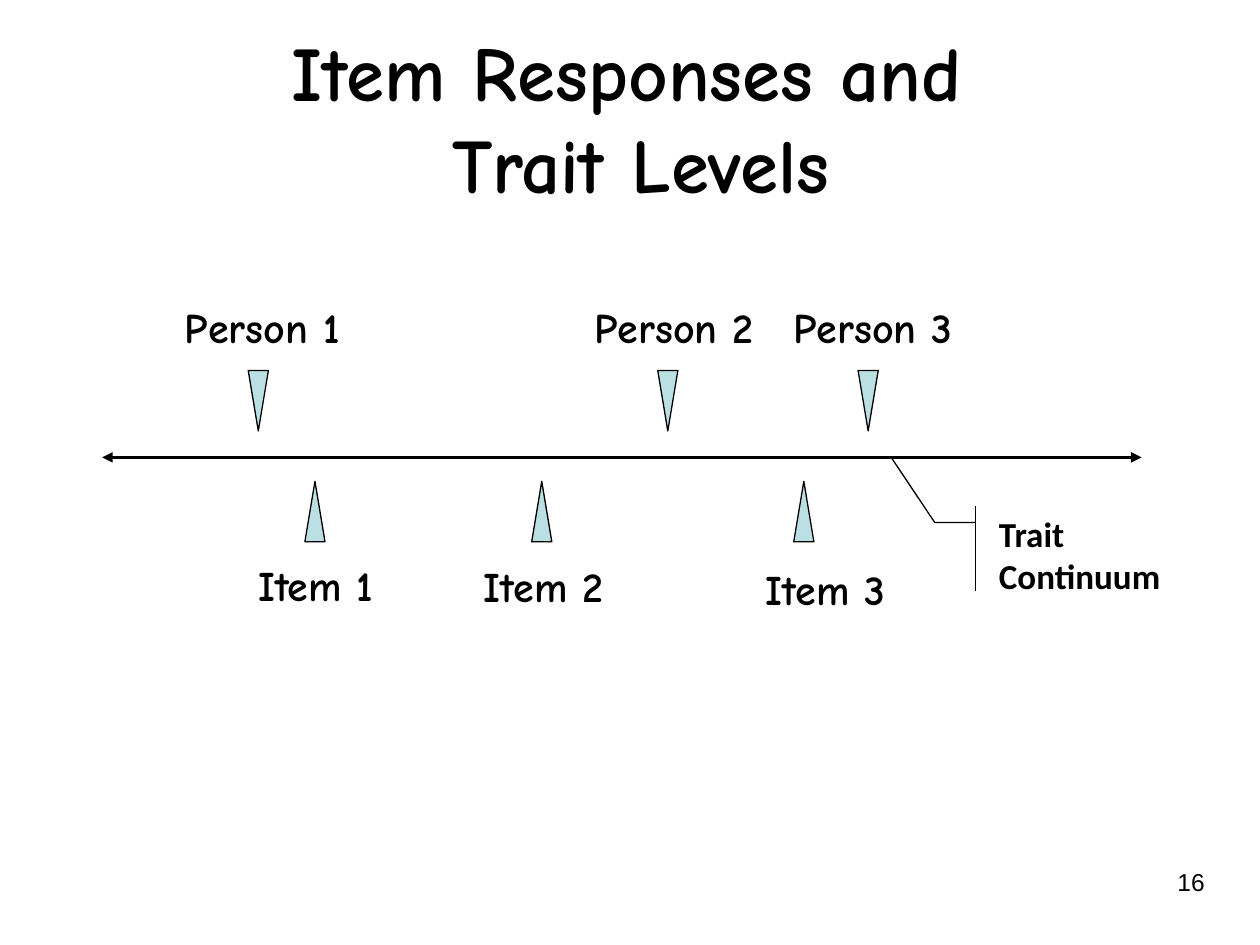
from dataclasses import dataclass

from lxml import etree
from pptx import Presentation
from pptx.dml.color import RGBColor
from pptx.enum.shapes import MSO_CONNECTOR, MSO_SHAPE
from pptx.enum.text import MSO_ANCHOR, PP_ALIGN
from pptx.oxml.ns import qn
from pptx.util import Inches, Pt

STRAIGHT = MSO_CONNECTOR.STRAIGHT
TRIANGLE = MSO_SHAPE.ISOSCELES_TRIANGLE
CALLOUT = MSO_SHAPE.LINE_CALLOUT_2_ACCENT_BAR
TOP, MIDDLE = MSO_ANCHOR.TOP, MSO_ANCHOR.MIDDLE
LEFT, CENTER, RIGHT = PP_ALIGN.LEFT, PP_ALIGN.CENTER, PP_ALIGN.RIGHT

COLORS = {"ink": "000000", "marker": "BBE0E3"}
FORMATS = {
    "title": {"name": "Comic Neue", "size": Pt(44), "bold": True},
    "label": {"name": "Comic Neue", "size": Pt(24), "bold": True},
    "callout": {"name": "Calibri", "size": Pt(20), "bold": True},
    "number": {"name": "Arial", "size": Pt(14), "bold": False},
}
MARKER_WIDTH, MARKER_HEIGHT = 0.16, 0.48
PERSON_TOP, ITEM_TOP = 2.94, 3.82
AXIS_LEFT, AXIS_RIGHT, AXIS_Y = 0.81, 9.06, 3.63


@dataclass
class Box:
    left: float
    top: float
    width: float
    height: float

    def lengths(self) -> list:
        return [Inches(value) for value in (self.left, self.top, self.width, self.height)]


@dataclass
class Marker:
    text: str
    left: float
    label: Box
    points_down: bool


MARKERS = [
    Marker(f"Person {number}", left, Box(label_left, 2.34, 1.6, 0.51), True)
    for number, (left, label_left) in enumerate([(1.97, 1.37), (5.22, 4.62), (6.81, 6.2)], 1)
] + [
    Marker(f"Item {number}", left, Box(label_left, label_top, 1.34, 0.51), False)
    for number, (left, label_left, label_top) in enumerate(
        [(2.42, 1.95, 4.39), (4.22, 3.74, 4.4), (6.3, 5.98, 4.42)], 1
    )
]


def color(name: str) -> RGBColor:
    return RGBColor.from_string(COLORS[name])


def write_text(shape, text: str, style: str, alignment=LEFT, anchor=TOP) -> None:
    frame = shape.text_frame
    frame.word_wrap = True
    frame.vertical_anchor = anchor
    frame.text = text
    for paragraph in frame.paragraphs:
        paragraph.alignment = alignment
        for run in paragraph.runs:
            run.font.color.rgb = color("ink")
            for attribute, value in FORMATS[style].items():
                setattr(run.font, attribute, value)


def add_text(slide, box: Box, text: str, style: str, alignment=LEFT, anchor=TOP) -> None:
    write_text(slide.shapes.add_textbox(*box.lengths()), text, style, alignment, anchor)


def add_outlined_shape(slide, kind, box: Box):
    shape = slide.shapes.add_shape(kind, *box.lengths())
    shape.shadow.inherit = False
    shape.line.color.rgb = color("ink")
    shape.line.width = Pt(0.75)
    return shape


def add_marker(slide, marker: Marker) -> None:
    top = PERSON_TOP if marker.points_down else ITEM_TOP
    triangle = add_outlined_shape(
        slide, TRIANGLE, Box(marker.left, top, MARKER_WIDTH, MARKER_HEIGHT)
    )
    triangle.rotation = 180 if marker.points_down else 0
    triangle.fill.solid()
    triangle.fill.fore_color.rgb = color("marker")
    add_text(slide, marker.label, marker.text, "label")


def add_continuum(slide) -> None:
    axis = slide.shapes.add_connector(
        STRAIGHT, Inches(AXIS_LEFT), Inches(AXIS_Y), Inches(AXIS_RIGHT), Inches(AXIS_Y)
    )
    axis.line.color.rgb = color("ink")
    axis.line.width = Pt(2)
    line = axis.line._get_or_add_ln()
    for end in ("a:headEnd", "a:tailEnd"):
        etree.SubElement(line, qn(end), type="triangle")
    etree.SubElement(axis._element.spPr, qn("a:effectLst"))


def add_callout(slide) -> None:
    callout = add_outlined_shape(slide, CALLOUT, Box(7.83, 4.02, 1.79, 0.67))
    callout.fill.background()
    for index, value in enumerate([0.19, -0.05, 0.19, -0.23, -0.57, -0.42]):
        callout.adjustments[index] = value
    write_text(callout, "Trait\nContinuum", "callout")


def main() -> None:
    presentation = Presentation()
    presentation.slide_width = Inches(10)
    presentation.slide_height = Inches(7.5)
    slide = presentation.slides.add_slide(presentation.slide_layouts[6])
    add_text(
        slide,
        Box(0.17, 0.3, 9.83, 1.25),
        "Item Responses and \vTrait Levels",
        "title",
        CENTER,
        MIDDLE,
    )
    add_continuum(slide)
    for marker in MARKERS:
        add_marker(slide, marker)
    add_callout(slide)
    add_text(slide, Box(8.06, 6.83, 1.6, 0.52), "16", "number", RIGHT)
    presentation.save("out.pptx")


if __name__ == "__main__":
    main()
